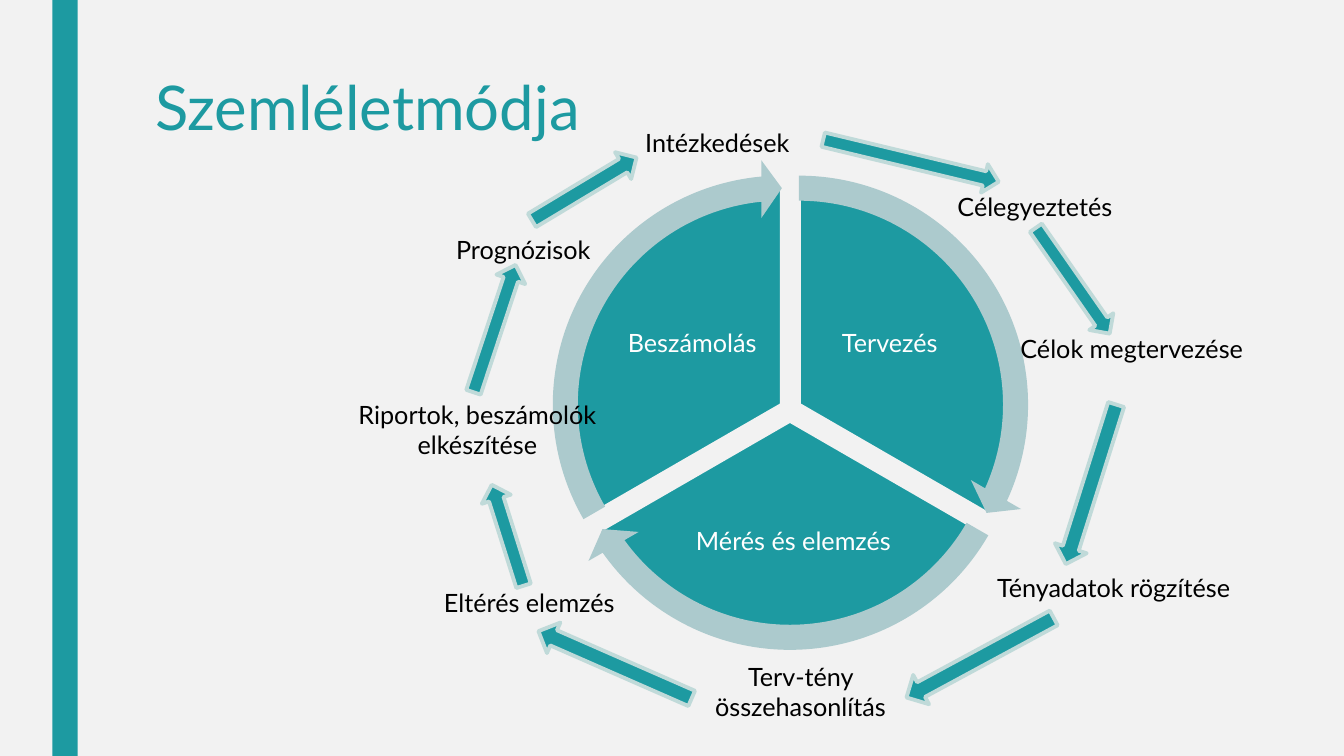
"""Builds the controlling cycle slide."""
from pptx import Presentation
from pptx.dml.color import RGBColor
from pptx.enum.shapes import MSO_SHAPE
from pptx.enum.text import MSO_ANCHOR, MSO_AUTO_SIZE, PP_ALIGN
from pptx.util import Inches, Pt

TEAL = RGBColor(0x1D, 0x9A, 0xA1)
RING = RGBColor(0xAC, 0xCA, 0xCD)
ARROW_EDGE = RGBColor(0xC0, 0xDA, 0xD9)
PAPER = RGBColor(0xF2, 0xF2, 0xF2)
WHITE = RGBColor(0xFF, 0xFF, 0xFF)
BLACK = RGBColor(0, 0, 0)

ANGLE_UNIT = 0.6
PIE_SIZE = 4.33
RING_SIZE = 4.87
BLANK_LINE = 0.35

PHASES = [
    ("Tervezés", 270, (5.76, 1.85), (8.05, 2.77, 1.55, 1.29), (14.725, 161.994)),
    ("Mérés és elemzés", 30, (5.67, 2.01), (6.71, 4.82, 2.32, 1.13), (86.72, 18.005)),
    ("Beszámolás", 150, (5.59, 1.85), (6.09, 2.77, 1.55, 1.29), (158.73, 90)),
]

STEPS = [
    ("Célegyeztetés", (8.96, 1.55, 2.61, 0.71), BLANK_LINE),
    ("Célok megtervezése", (9.96, 2.96, 2.53, 1.01), BLANK_LINE),
    ("Tényadatok rögzítése", (9.55, 5.33, 2.99, 0.71), BLANK_LINE),
    ("Terv-tény összehasonlítás", (6.5, 6.32, 2.88, 0.89), 0.24),
    ("Eltérés elemzés", (4.01, 5.48, 2.48, 0.71), BLANK_LINE),
    ("Riportok, beszámolók elkészítése", (3.42, 3.91, 2.63, 1.01), 0.05),
    ("Prognózisok", (4.11, 2.28, 2.16, 0.4), 0.05),
    ("Intézkedések", (6.05, 0.91, 2.13, 0.71), BLANK_LINE),
]

STEP_ARROWS = [
    ((8.14, 1.45, 1.79, 0.29), 13.5),
    ((10, 2.64, 1.28, 0.29), 55.1),
    ((9.99, 4.64, 1.66, 0.33), 107.5),
    ((8.89, 6.36, 1.66, 0.33), 151.6),
    ((5.27, 6.43, 1.66, 0.33), 203.7),
    ((4.51, 5.16, 1.05, 0.3), 252.5),
    ((4.24, 3.11, 1.33, 0.3), 288.3),
    ((5.19, 1.72, 1.21, 0.31), 329),
]


def write_text(frame, text, *, size=18, color=BLACK, align=PP_ALIGN.CENTER,
               anchor=MSO_ANCHOR.TOP, spacing=1.0):
    frame.word_wrap = True
    frame.vertical_anchor = anchor
    paragraph = frame.paragraphs[0]
    paragraph.alignment = align
    paragraph.line_spacing = spacing
    run = paragraph.add_run()
    run.text = text
    run.font.name = "Lato"
    run.font.size = Pt(size)
    run.font.color.rgb = color


class CycleSlide:
    def __init__(self, presentation):
        self.slide = presentation.slides.add_slide(presentation.slide_layouts[5])
        self.slide.background.fill.solid()
        self.slide.background.fill.fore_color.rgb = PAPER

    def title(self, text, box):
        heading = self.slide.shapes.title
        heading.left, heading.top, heading.width, heading.height = map(Inches, box)
        heading.text_frame.auto_size = MSO_AUTO_SIZE.NONE
        write_text(heading.text_frame, text, size=44, color=TEAL,
                   align=PP_ALIGN.LEFT, spacing=0.89)

    def shape(self, kind, box, fill=TEAL, edge=None, adjustments=(), rotation=0):
        shape = self.slide.shapes.add_shape(kind, *map(Inches, box))
        shape.shadow.inherit = False
        shape.fill.solid()
        shape.fill.fore_color.rgb = fill
        if edge is None:
            shape.line.fill.background()
        else:
            shape.line.color.rgb = edge
            shape.line.width = Pt(2.75)
        for index, value in enumerate(adjustments):
            shape.adjustments[index] = value
        shape.rotation = rotation

    def wedge(self, corner, start):
        end = (start + 120) % 360
        self.shape(MSO_SHAPE.PIE, (*corner, PIE_SIZE, PIE_SIZE), edge=PAPER,
                   adjustments=(start * ANGLE_UNIT, end * ANGLE_UNIT))

    def ring_arrow(self, corner, ends):
        overhang = (RING_SIZE - PIE_SIZE) / 2
        left, top = (place - overhang for place in corner)
        self.shape(MSO_SHAPE.CIRCULAR_ARROW, (left, top, RING_SIZE, RING_SIZE),
                   fill=RING, adjustments=(0.051, 3.275, *ends, 0.059))

    def phase_label(self, text, box):
        frame = self.slide.shapes.add_textbox(*map(Inches, box)).text_frame
        frame.margin_left = frame.margin_right = Inches(0.03)
        frame.margin_top = frame.margin_bottom = Inches(0.03)
        write_text(frame, text, color=WHITE, anchor=MSO_ANCHOR.MIDDLE, spacing=0.9)

    def step_label(self, text, box, top_margin):
        frame = self.slide.shapes.add_textbox(*map(Inches, box)).text_frame
        frame.margin_top = Inches(top_margin)
        frame.auto_size = MSO_AUTO_SIZE.SHAPE_TO_FIT_TEXT
        write_text(frame, text)


def main():
    presentation = Presentation()
    presentation.slide_width = Inches(13.33)
    presentation.slide_height = Inches(7.5)
    cycle = CycleSlide(presentation)
    cycle.shape(MSO_SHAPE.RECTANGLE, (0.52, 0, 0.25, 7.5))
    cycle.title("Szemléletmódja", (1.44, 0.72, 10.5, 1.62))
    for phase, start, corner, label_box, _ in PHASES:
        cycle.wedge(corner, start)
        cycle.phase_label(phase, label_box)
    for _, _, corner, _, ends in PHASES:
        cycle.ring_arrow(corner, ends)
    for step, box, top_margin in STEPS:
        cycle.step_label(step, box, top_margin)
    for box, rotation in STEP_ARROWS:
        cycle.shape(MSO_SHAPE.RIGHT_ARROW, box, edge=ARROW_EDGE, rotation=rotation)
    presentation.save("out.pptx")


if __name__ == "__main__":
    main()
